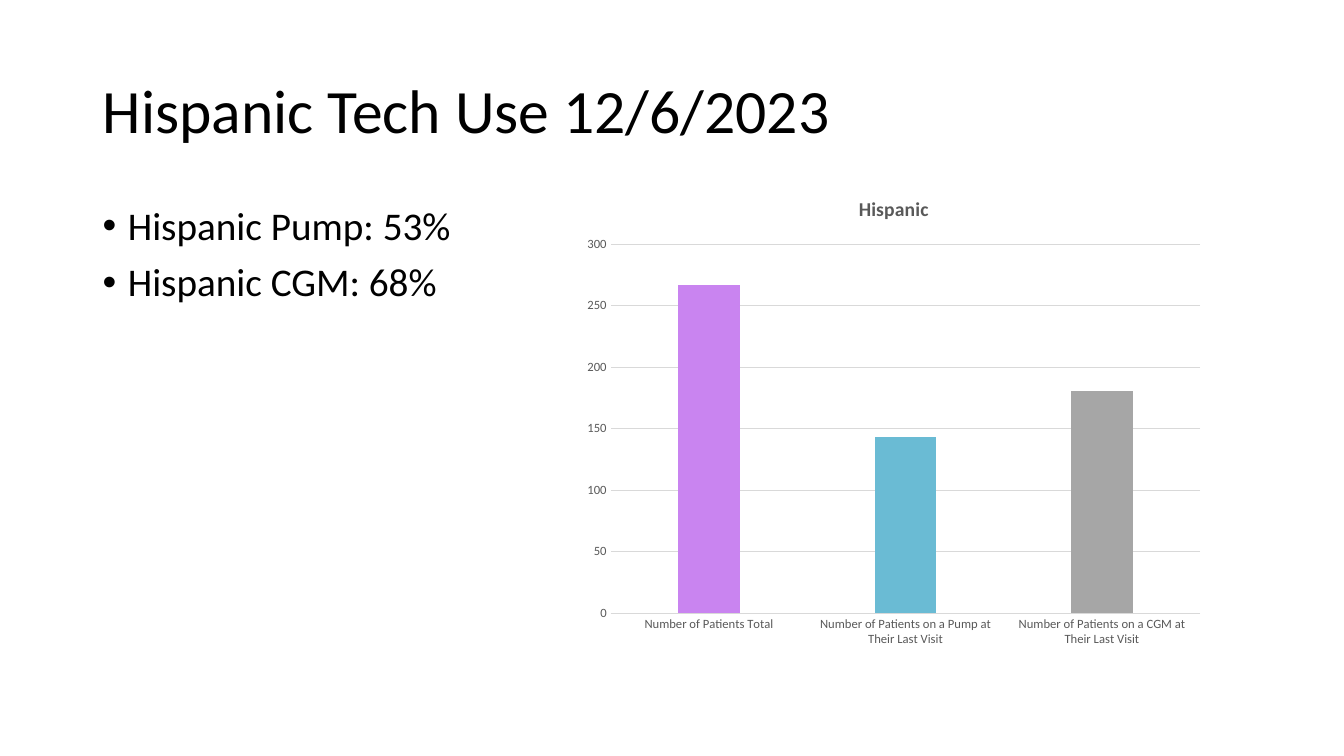
from dataclasses import dataclass

from lxml import etree
from pptx import Presentation
from pptx.chart.data import CategoryChartData
from pptx.dml.color import RGBColor
from pptx.enum.chart import XL_CHART_TYPE, XL_TICK_MARK
from pptx.enum.text import MSO_ANCHOR, MSO_AUTO_SIZE, PP_ALIGN
from pptx.oxml.ns import qn
from pptx.util import Inches, Pt

COLUMNS = XL_CHART_TYPE.COLUMN_CLUSTERED
NO_TICK = XL_TICK_MARK.NONE
MIDDLE = MSO_ANCHOR.MIDDLE
NO_AUTOFIT = MSO_AUTO_SIZE.NONE
LEFT = PP_ALIGN.LEFT


@dataclass(frozen=True)
class Theme:
    font: str = "Calibri"
    ink: str = "000000"
    muted: str = "595959"
    rule: str = "D9D9D9"
    series: str = "4472C4"
    columns: tuple = ("C984F0", "6ABBD4", "A6A6A6")
    title_size: int = 44
    body_size: int = 28
    chart_title_size: int = 14
    chart_size: int = 10
    axis_size: int = 9


THEME = Theme()


def style_font(font, size, color, bold=False):
    font.name = THEME.font
    font.size = Pt(size)
    font.bold = bold
    font.color.rgb = RGBColor.from_string(color)


def style_line(line):
    line.color.rgb = RGBColor.from_string(THEME.rule)
    line.width = Pt(0.75)


deck = Presentation()
deck.slide_width = Inches(13.33)
deck.slide_height = Inches(7.5)
slide = deck.slides.add_slide(deck.slide_layouts[5])

title = slide.shapes.title
title.left, title.top = Inches(0.92), Inches(0.4)
title.width, title.height = Inches(11.5), Inches(1.45)
title_frame = title.text_frame
title_frame.auto_size = NO_AUTOFIT
title_frame.vertical_anchor = MIDDLE
para = title_frame.paragraphs[0]
para.alignment = LEFT
para.line_spacing = 0.9
span = para.add_run()
span.text = "Hispanic Tech Use 12/6/2023"
style_font(span.font, THEME.title_size, THEME.ink)

box = slide.shapes.add_textbox(Inches(0.92), Inches(2), Inches(11.5), Inches(4.76))
body_frame = box.text_frame
body_frame.word_wrap = True
for index, bullet_text in enumerate(("Hispanic Pump: 53%", "Hispanic CGM: 68%")):
    para = body_frame.add_paragraph() if index else body_frame.paragraphs[0]
    para.line_spacing = 0.9
    para.space_before = Pt(10)
    properties = para._p.get_or_add_pPr()
    properties.set("marL", str(Inches(0.25)))
    properties.set("indent", str(-Inches(0.25)))
    etree.SubElement(properties, qn("a:buFont")).set("typeface", "Arial")
    etree.SubElement(properties, qn("a:buChar")).set("char", "•")
    span = para.add_run()
    span.text = bullet_text
    style_font(span.font, THEME.body_size, THEME.ink)

patients = CategoryChartData()
patients.categories = (
    "Number of Patients Total",
    "Number of Patients on a Pump at Their Last Visit",
    "Number of Patients on a CGM at Their Last Visit",
)
patients.add_series("Hispanic", (267, 143, 181))
chart = slide.shapes.add_chart(
    COLUMNS, Inches(5.7), Inches(1.75), Inches(6.33), Inches(4.76), patients
).chart
style_font(chart.font, THEME.chart_size, THEME.ink)
chart.has_legend = False
chart.has_title = True
span = chart.chart_title.text_frame.paragraphs[0].add_run()
span.text = "Hispanic"
style_font(span.font, THEME.chart_title_size, THEME.muted, bold=True)

plot = chart.plots[0]
plot.gap_width = 219
plot.overlap = -27
plot.vary_by_categories = False
series = plot.series[0]
series.format.fill.solid()
series.format.fill.fore_color.rgb = RGBColor.from_string(THEME.series)
for index, color in enumerate(THEME.columns):
    fill = series.points[index].format.fill
    fill.solid()
    fill.fore_color.rgb = RGBColor.from_string(color)

for axis in (chart.category_axis, chart.value_axis):
    axis.major_tick_mark = NO_TICK
    axis.minor_tick_mark = NO_TICK
    style_font(axis.tick_labels.font, THEME.axis_size, THEME.muted)
style_line(chart.category_axis.format.line)
chart.value_axis.format.line.fill.background()
chart.value_axis.minimum_scale = 0
chart.value_axis.maximum_scale = 300
chart.value_axis.major_unit = 50
style_line(chart.value_axis.major_gridlines.format.line)

deck.save("out.pptx")
